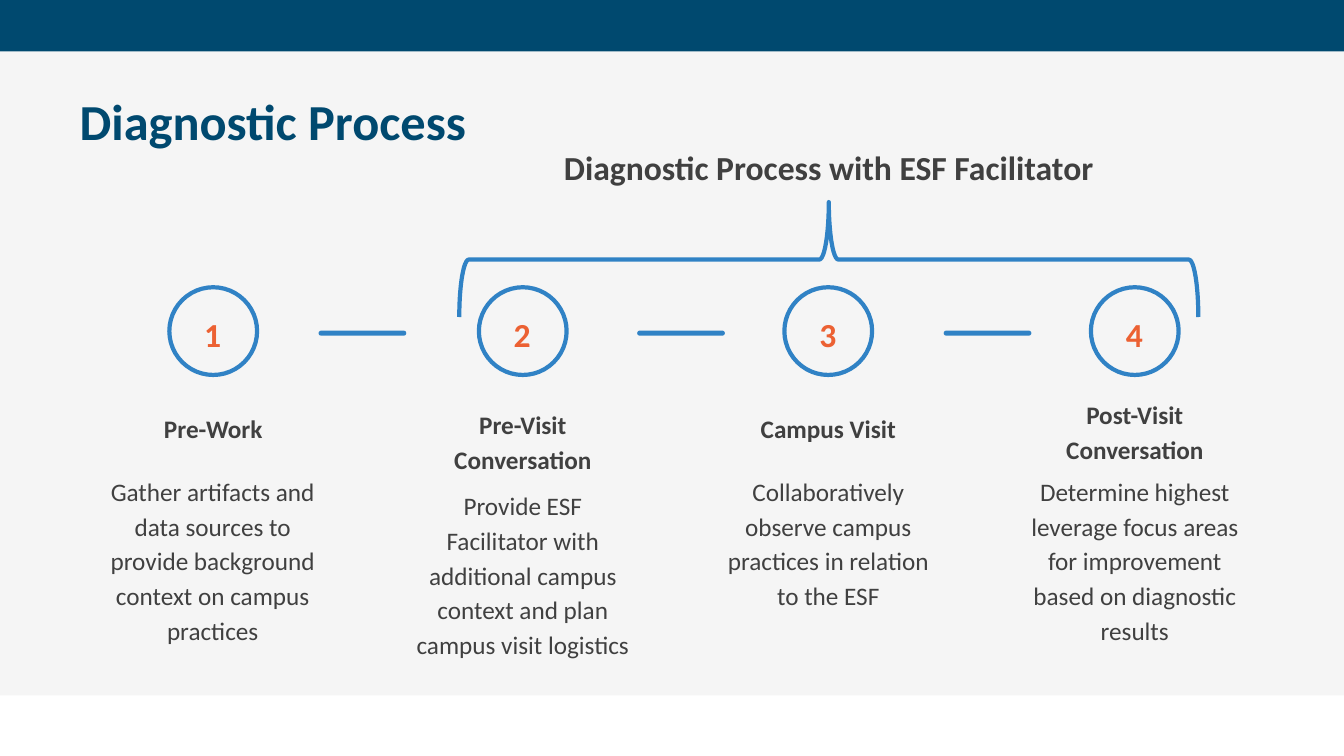
from dataclasses import dataclass

from pptx import Presentation
from pptx.dml.color import RGBColor
from pptx.enum.shapes import MSO_SHAPE
from pptx.enum.text import MSO_ANCHOR, PP_ALIGN
from pptx.shapes.autoshape import Shape
from pptx.util import Emu, Pt

PX = 9144  # one px is a hundredth of an inch
NAVY = RGBColor(0x00, 0x49, 0x6F)
BLUE = RGBColor(0x30, 0x82, 0xC5)
CORAL = RGBColor(0xEC, 0x61, 0x33)
GREY = RGBColor(0x40, 0x40, 0x40)
PALE = RGBColor(0xF5, 0xF5, 0xF5)
RECT, ROUND = MSO_SHAPE.RECTANGLE, MSO_SHAPE.ROUNDED_RECTANGLE
OVAL, BRACE = MSO_SHAPE.OVAL, MSO_SHAPE.LEFT_BRACE
TOP, MIDDLE, BOTTOM = MSO_ANCHOR.TOP, MSO_ANCHOR.MIDDLE, MSO_ANCHOR.BOTTOM
LEFT, CENTER = PP_ALIGN.LEFT, PP_ALIGN.CENTER


@dataclass(frozen=True)
class Box:
    left: int
    top: int
    width: int
    height: int

    def emu(self) -> list[Emu]:
        return [Emu(n * PX) for n in (self.left, self.top, self.width, self.height)]


@dataclass(frozen=True)
class Style:
    size: int
    color: RGBColor
    bold: bool = True
    anchor: MSO_ANCHOR = TOP
    align: PP_ALIGN = CENTER
    inset: tuple[int, int] = (13, 13)
    line: float = 1.15
    after: int = 0


@dataclass(frozen=True)
class Step:
    left: int
    label: str
    body: str
    label_top: int = 388
    body_top: int = 455
    width: int = 249


TITLE = Style(36, NAVY, anchor=MIDDLE, align=LEFT, inset=(10, 5), line=1.0)
HEAD = Style(24, GREY, inset=(10, 10), line=1.0)
NUMBER = Style(24, CORAL, inset=(0, 0), after=21)
LABEL = Style(18, GREY, anchor=BOTTOM)
BODY = Style(18, GREY, bold=False, after=21)

STEPS = [
    Step(168, "Pre-Work", "Gather artifacts and data sources to provide "
         "background context on campus practices", width=256),
    Step(475, "Pre-Visit Conversation", "Provide ESF Facilitator with additional "
         "campus context and plan campus visit logistics", 419, 469),
    Step(778, "Campus Visit", "Collaboratively observe campus practices in "
         "relation to the ESF"),
    Step(1082, "Post-Visit Conversation", "Determine highest leverage focus areas "
         "for improvement based on diagnostic results", 409),
]
DISC = 87
DASHES = (316, 632, 936)


def apply(item: object, values: dict[str, object]) -> None:
    for name, value in values.items():
        setattr(item, name, value)


def write(shape: Shape, text: str, style: Style) -> None:
    frame = shape.text_frame
    across, down = (Emu(n * PX) for n in style.inset)
    apply(frame, {"text": text, "word_wrap": True, "vertical_anchor": style.anchor,
                  "margin_left": across, "margin_right": across,
                  "margin_top": down, "margin_bottom": down})
    para = frame.paragraphs[0]
    apply(para, {"alignment": style.align, "line_spacing": style.line,
                 "space_before": Pt(0), "space_after": Pt(style.after)})
    font = para.runs[0].font
    apply(font, {"name": "Calibri", "size": Pt(style.size), "bold": style.bold})
    font.color.rgb = style.color


def label(host, box: Box, text: str, style: Style) -> None:
    write(host.shapes.add_textbox(*box.emu()), text, style)


def solid(host, kind: MSO_SHAPE, box: Box, color: RGBColor) -> Shape:
    shape = host.shapes.add_shape(kind, *box.emu())
    shape.shadow.inherit = False
    shape.fill.solid()
    shape.fill.fore_color.rgb = color
    shape.line.fill.background()
    return shape


def outline(host, kind: MSO_SHAPE, box: Box) -> Shape:
    shape = host.shapes.add_shape(kind, *box.emu())
    shape.shadow.inherit = False
    shape.fill.background()
    shape.line.color.rgb = BLUE
    shape.line.width = Pt(3)
    return shape


def draw(slide, rank: int, step: Step) -> None:
    group = slide.shapes.add_group_shape()
    mid = step.left + DISC // 2
    outline(group, OVAL, Box(step.left, 285, DISC, DISC))
    label(group, Box(mid - 32, 305, 64, 47), str(rank), NUMBER)
    label(group, Box(mid - 124, step.label_top, 249, 65), step.label, LABEL)
    label(group, Box(mid - step.width // 2, step.body_top, step.width, 108),
          step.body, BODY)


def main() -> None:
    deck = Presentation()
    deck.slide_width, deck.slide_height = Emu(1333 * PX), Emu(750 * PX)
    slide = deck.slides.add_slide(deck.slide_layouts[5])

    # Title, with the panel and top band behind it
    title = slide.shapes.title
    spot = dict(zip(("left", "top", "width", "height"), Box(69, 73, 1173, 93).emu()))
    apply(title, spot)
    write(title, "Diagnostic Process", TITLE)
    for box, color in ((Box(0, 51, 1333, 639), PALE), (Box(0, -1, 1333, 52), NAVY)):
        title.element.addprevious(solid(slide, RECT, box, color).element)

    # Steps and the dashes between them
    for rank, step in enumerate(STEPS, 1):
        draw(slide, rank, step)
    for left in DASHES:
        dash = solid(slide, ROUND, Box(left, 328, 87, 5), BLUE)
        dash.adjustments[0] = 0.5

    # Brace over the facilitated steps
    brace = outline(slide, BRACE, Box(765, -109, 114, 733))
    brace.rotation = 90
    brace.adjustments[0] = 0.083
    label(slide, Box(474, 136, 696, 51), "Diagnostic Process with ESF Facilitator", HEAD)

    deck.save("out.pptx")


if __name__ == "__main__":
    main()
